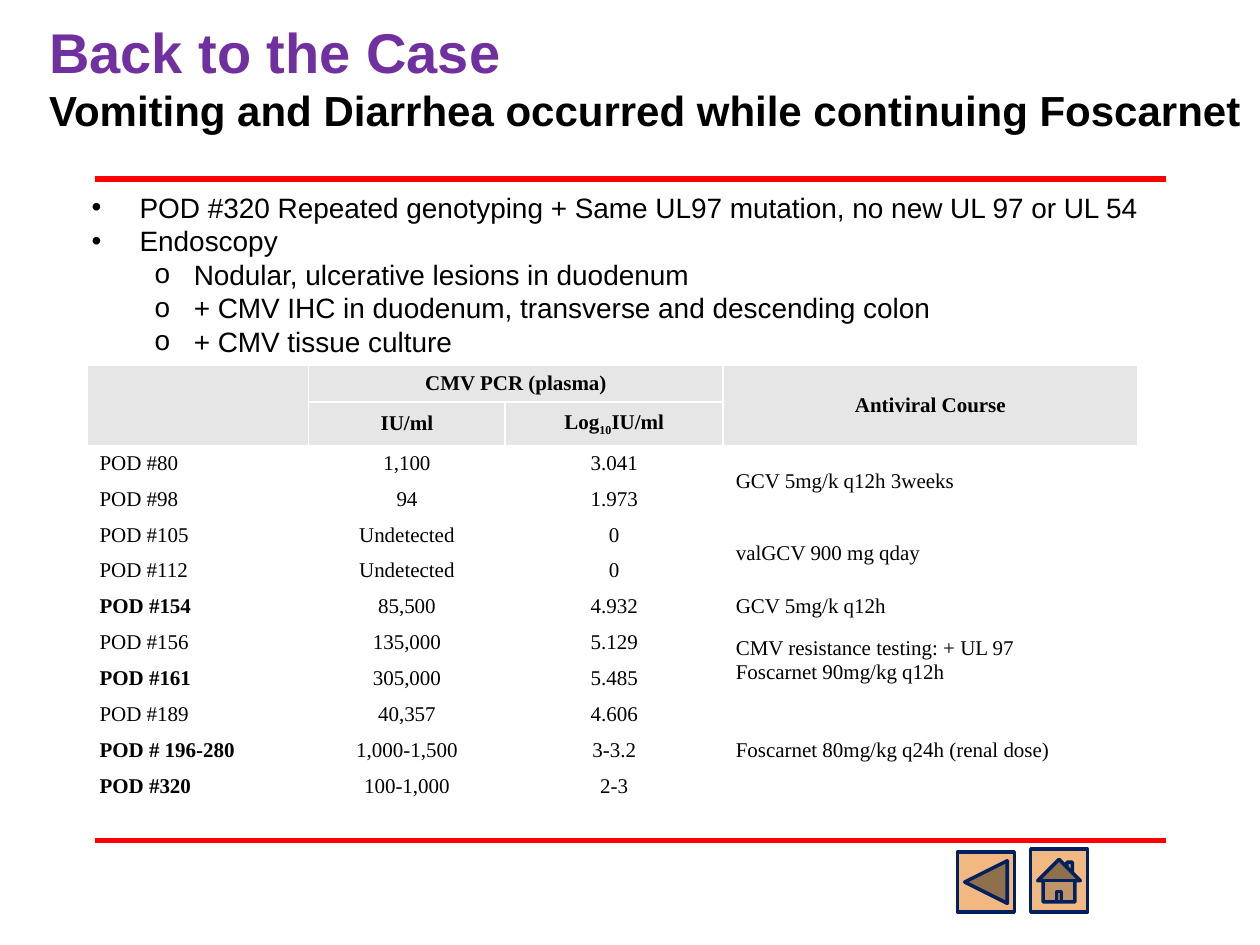
"""Builds the CMV case slide with its antiviral course table."""
from dataclasses import dataclass

from lxml.etree import SubElement
from pptx import Presentation
from pptx.dml.color import RGBColor
from pptx.enum.shapes import MSO_CONNECTOR, MSO_SHAPE
from pptx.enum.text import MSO_ANCHOR, PP_ALIGN
from pptx.oxml.ns import qn
from pptx.util import Inches, Pt

COLORS = {"rule": "FF0000", "heading": "7030A0", "text": "000000", "header": "E6E6E6",
          "border": "FFFFFF", "button": "F1B981", "outline": "002060"}
COLUMNS = [1.76, 1.56, 1.73, 3.29]
HEADER_HEIGHTS = [0.29, 0.3]
ROW_HEIGHT = 0.285


@dataclass
class Reading:
    day: str
    iu: str
    log: str
    course: str = ""
    span: int = 1
    bold: bool = False


@dataclass
class Bullet:
    text: str
    level: int = 0


@dataclass
class Button:
    kind: MSO_SHAPE
    left: float
    top: float
    height: float
    rotation: int = 0


READINGS = [
    Reading("POD #80", "1,100", "3.041", "GCV 5mg/k q12h 3weeks", 2),
    Reading("POD #98", "94", "1.973"),
    Reading("POD #105", "Undetected", "0", "valGCV 900 mg qday", 2),
    Reading("POD #112", "Undetected", "0"),
    Reading("POD #154", "85,500", "4.932", "GCV 5mg/k q12h", bold=True),
    Reading("POD #156", "135,000", "5.129",
            "CMV resistance testing: + UL 97\nFoscarnet 90mg/kg q12h", 2),
    Reading("POD #161", "305,000", "5.485", bold=True),
    Reading("POD #189", "40,357", "4.606", "Foscarnet 80mg/kg q24h (renal dose)", 3),
    Reading("POD # 196-280", "1,000-1,500", "3-3.2", bold=True),
    Reading("POD #320", "100-1,000", "2-3", bold=True),
]
FINDINGS = [
    Bullet("POD #320 Repeated genotyping + Same UL97 mutation, no new UL 97 or UL 54"),
    Bullet("Endoscopy"),
    Bullet("Nodular, ulcerative lesions in duodenum", 1),
    Bullet("+ CMV IHC in duodenum, transverse and descending colon", 1),
    Bullet("+ CMV tissue culture", 1),
]
BUTTONS = [
    Button(MSO_SHAPE.ACTION_BUTTON_FORWARD_OR_NEXT, 7.6, 6.76, 0.48, 180),
    Button(MSO_SHAPE.ACTION_BUTTON_HOME, 8.18, 6.74, 0.5),
]


def rgb(name: str) -> RGBColor:
    return RGBColor.from_string(COLORS[name])


def add_text(paragraph, text: str, *, size: float, font: str = "Arial", color: str = "text",
             bold: bool = False, baseline: int = 0) -> None:
    run = paragraph.add_run()
    run.text = text
    run.font.size, run.font.name, run.font.bold = Pt(size), font, bold
    run.font.color.rgb = rgb(color)
    if baseline:
        run.font._element.set("baseline", str(baseline * 1000))


def add_rule(slide, top: float) -> None:
    rule = slide.shapes.add_connector(MSO_CONNECTOR.STRAIGHT, Inches(0.75), Inches(top),
                                      Inches(9.25), Inches(top))
    rule.line.color.rgb, rule.line.width = rgb("rule"), Pt(3)
    SubElement(rule._element.spPr, qn("a:effectLst"))


def add_title(slide) -> None:
    title = slide.shapes.title
    title.left, title.top, title.width, title.height = map(Inches, (0.29, 0.25, 9.71, 0.87))
    title.text_frame.vertical_anchor = MSO_ANCHOR.BOTTOM
    heading = title.text_frame.paragraphs[0]
    heading.alignment = PP_ALIGN.LEFT
    add_text(heading, "Back to the Case", size=32, color="heading", bold=True)
    heading.add_line_break()
    add_text(heading, "Vomiting and Diarrhea occurred while continuing Foscarnet",
             size=24, bold=True)


def add_findings(slide) -> None:
    frame = slide.shapes.add_textbox(Inches(0.63), Inches(1.46), Inches(8.9),
                                     Inches(1.65)).text_frame
    frame.word_wrap = True
    for index, finding in enumerate(FINDINGS):
        paragraph = frame.add_paragraph() if index else frame.paragraphs[0]
        paragraph.level, paragraph.line_spacing = finding.level, Pt(19.2)
        margin, indent, mark = [(0.38, -0.38, "•"), (0.81, -0.31, "o")][finding.level]
        properties = paragraph._p.get_or_add_pPr()
        properties.set("marL", str(Inches(margin)))
        properties.set("indent", str(Inches(indent)))
        SubElement(properties, qn("a:buFont"), typeface="Arial")
        SubElement(properties, qn("a:buChar"), char=mark)
        add_text(paragraph, finding.text, size=16)


def style_cell(cell, fill: str = "") -> None:
    cell.vertical_anchor = MSO_ANCHOR.MIDDLE
    cell.margin_top = cell.margin_bottom = Inches(0.02)
    properties = cell._tc.get_or_add_tcPr()
    for side in ("lnL", "lnR", "lnT", "lnB"):
        border = SubElement(properties, qn(f"a:{side}"), w=str(Pt(1)))
        solid = SubElement(border, qn("a:solidFill"))
        SubElement(solid, qn("a:srgbClr"), val=COLORS["border"])
    if fill:
        cell.fill.solid()
        cell.fill.fore_color.rgb = rgb(fill)
    else:
        cell.fill.background()


def write_cell(cell, text: str, *, centered: bool = True, bold: bool = False,
               subscript: str = "", tail: str = "") -> None:
    for index, line in enumerate(text.split("\n")):
        paragraph = cell.text_frame.add_paragraph() if index else cell.text_frame.paragraphs[0]
        paragraph.alignment = PP_ALIGN.CENTER if centered else PP_ALIGN.LEFT
        for part, baseline in ((line, 0), (subscript, -25), (tail, 0)):
            if part:
                add_text(paragraph, part, size=12, font="Times New Roman", bold=bold,
                         baseline=baseline)


def add_readings(slide) -> None:
    heights = HEADER_HEIGHTS + [ROW_HEIGHT] * len(READINGS)
    table = slide.shapes.add_table(len(heights), len(COLUMNS), Inches(0.69), Inches(2.9),
                                   Inches(sum(COLUMNS)), Inches(sum(heights))).table
    table.horz_banding = False
    for column, width in zip(table.columns, COLUMNS):
        column.width = Inches(width)
    for index, (row, height) in enumerate(zip(table.rows, heights)):
        row.height = Inches(height)
        for cell in row.cells:
            style_cell(cell, "header" if index < len(HEADER_HEIGHTS) else "")
    for start, end in (((0, 0), (1, 0)), ((0, 1), (0, 2)), ((0, 3), (1, 3))):
        table.cell(*start).merge(table.cell(*end))
    write_cell(table.cell(0, 1), "CMV PCR (plasma)", bold=True)
    write_cell(table.cell(0, 3), "Antiviral Course", bold=True)
    write_cell(table.cell(1, 1), "IU/ml", bold=True)
    write_cell(table.cell(1, 2), "Log", bold=True, subscript="10", tail="IU/ml")
    for index, reading in enumerate(READINGS, len(HEADER_HEIGHTS)):
        write_cell(table.cell(index, 0), reading.day, centered=False, bold=reading.bold)
        write_cell(table.cell(index, 1), reading.iu)
        write_cell(table.cell(index, 2), reading.log)
        if reading.course:
            course = table.cell(index, 3)
            if reading.span > 1:
                course.merge(table.cell(index + reading.span - 1, 3))
            write_cell(course, reading.course, centered=False)


def add_button(slide, button: Button) -> None:
    shape = slide.shapes.add_shape(button.kind, Inches(button.left), Inches(button.top),
                                   Inches(0.45), Inches(button.height))
    shape.rotation = button.rotation
    shape.shadow.inherit = False
    shape.fill.solid()
    shape.fill.fore_color.rgb = rgb("button")
    shape.line.color.rgb, shape.line.width = rgb("outline"), Pt(2)


def main() -> None:
    presentation = Presentation()
    presentation.slide_width, presentation.slide_height = Inches(10), Inches(7.5)
    slide = presentation.slides.add_slide(presentation.slide_layouts[5])
    for top in (1.42, 6.67):
        add_rule(slide, top)
    add_title(slide)
    add_readings(slide)
    add_findings(slide)
    for button in BUTTONS:
        add_button(slide, button)
    presentation.save("out.pptx")


if __name__ == "__main__":
    main()
